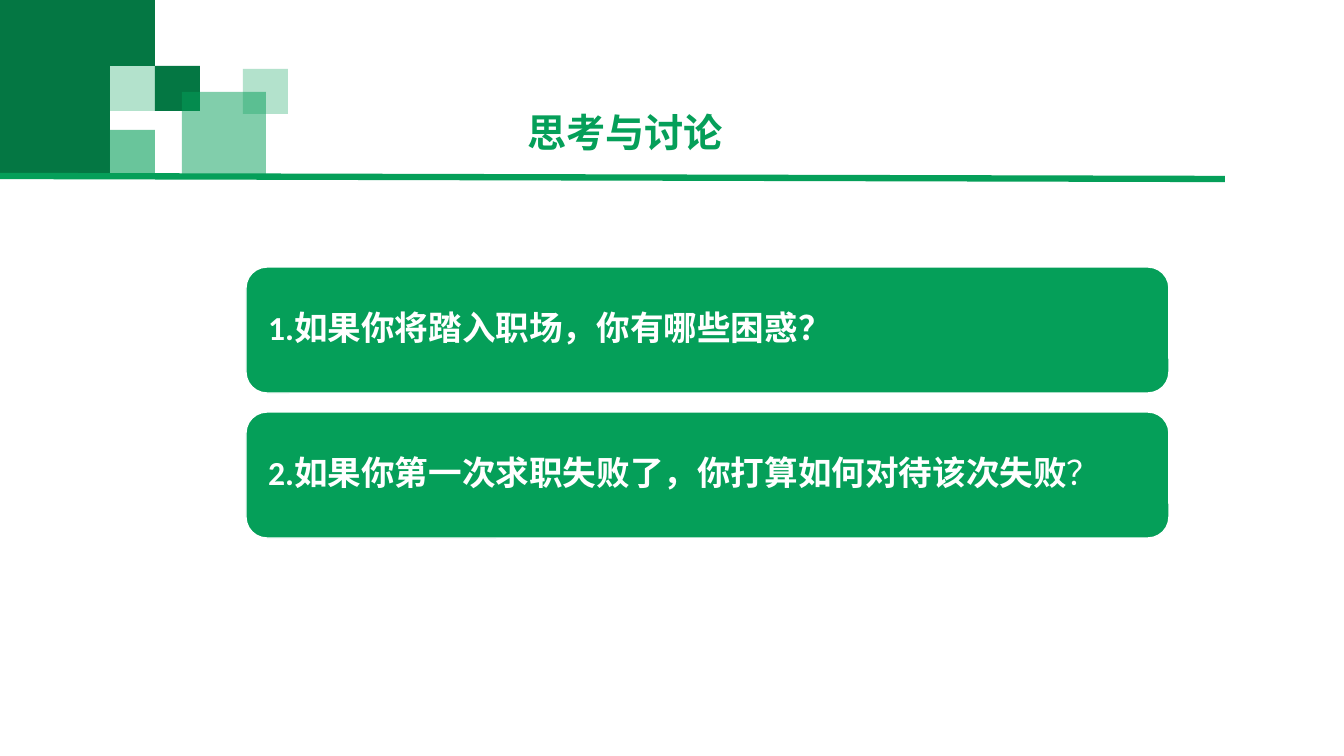
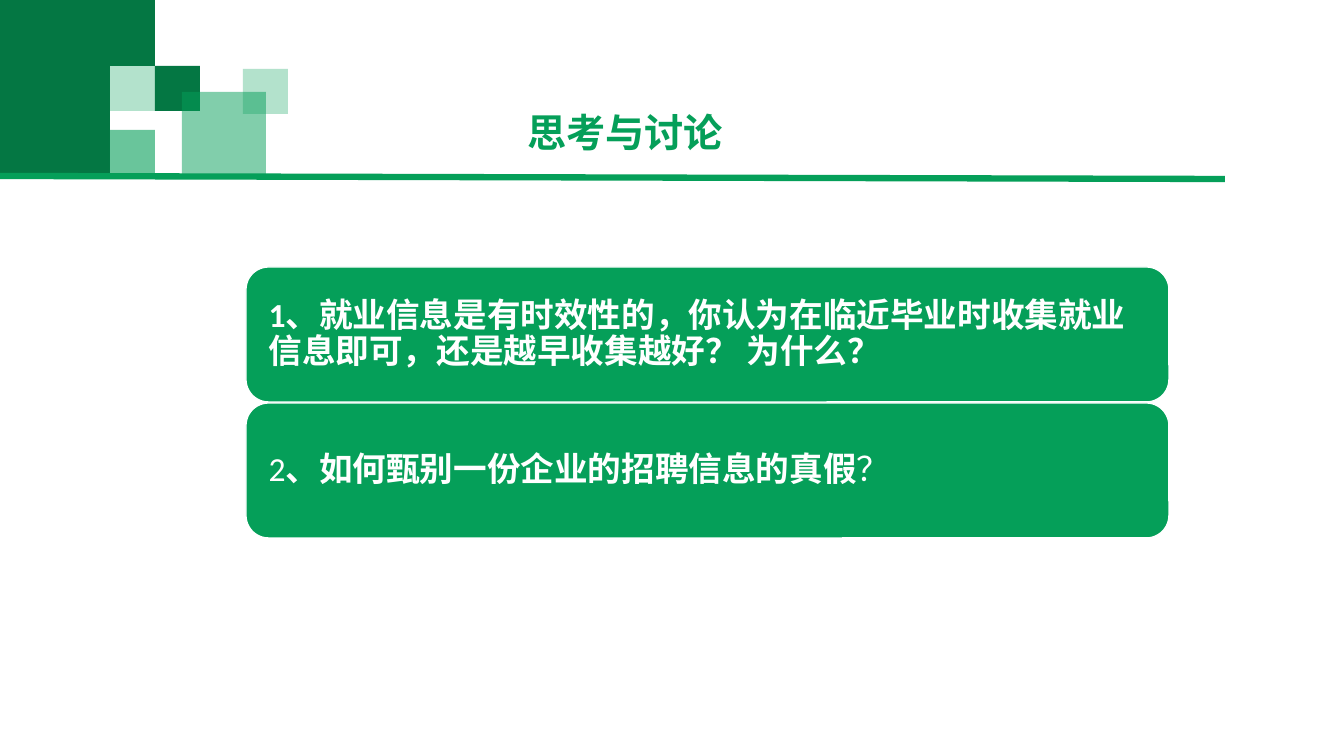
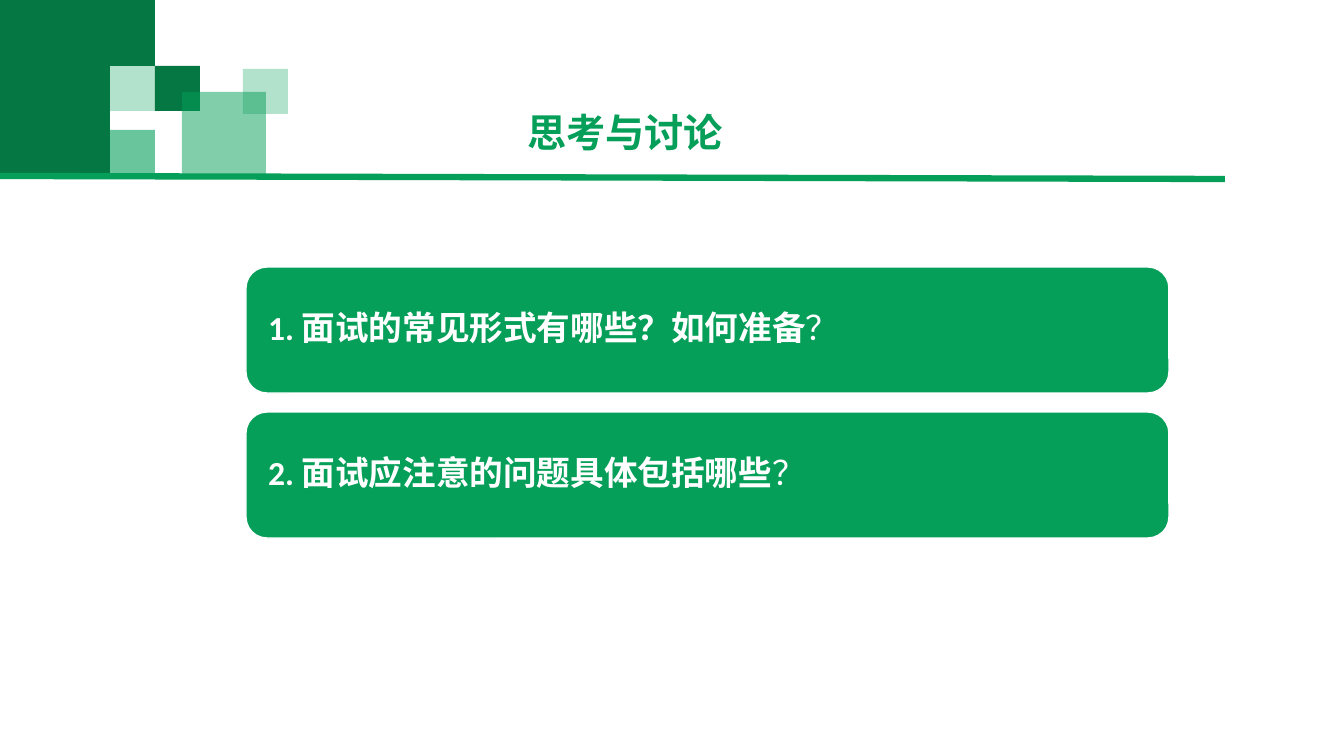
from lxml.etree import SubElement
from pptx import Presentation
from pptx.dml.color import RGBColor
from pptx.enum.lang import MSO_LANGUAGE_ID
from pptx.enum.shapes import MSO_CONNECTOR, MSO_SHAPE
from pptx.enum.text import MSO_ANCHOR, MSO_AUTO_SIZE, PP_ALIGN
from pptx.oxml.ns import qn
from pptx.util import Pt

TITLE = "思考与讨论"
SLIDES = [
    {"card_height": 126, "questions": [
        [("1.如果你将踏入职场，你有哪些困惑？", True)],
        [("2.如果你第一次求职失败了，你打算如何对待该次失败", True), ("？", False)],
    ]},
    {"card_height": 135, "questions": [
        [("1、就业信息是有时效性的，你认为在临近毕业时收集就业信息即可，还是越早收集越好？ 为什么？", True)],
        [("2", False), ("、如何甄别一份企业的招聘信息的真假", True), ("？", False)],
    ]},
    {"card_height": 126, "questions": [
        [("1. 面试的常见形式有哪些？如何准备", True), ("？", False)],
        [("2. 面试应注意的问题具体包括哪些", True), ("？", False)],
    ]},
]

FONT = "Calibri"
GREEN, DARK_GREEN, WHITE = "059F59", "047743", "FFFFFF"
SQUARES = [
    ((0, 66, 110, 110), DARK_GREEN, 100),
    ((0, 0, 155, 66), DARK_GREEN, 100),
    ((110, 66, 45, 45), GREEN, 30),
    ((155, 66, 45, 45), DARK_GREEN, 100),
    ((110, 130, 45, 45), GREEN, 60),
    ((182, 92, 84, 84), GREEN, 50),
    ((243, 69, 45, 45), GREEN, 30),
]
RULE = (0, 176, 1225, 179)
TITLE_BOX = (517, 109, 436, 52)
CARDS_BOX = (246, 267, 923, 271)
CARD_INSET = 16


def px(length):
    return round(length * 914400 / 100.8)


def color(value):
    return RGBColor.from_string(value)


def place(shape, box):
    shape.left, shape.top, shape.width, shape.height = map(px, box)


def format_run(run, size, value, bold):
    run.font.name = FONT
    run.font.size = Pt(size)
    run.font.bold = bold
    run.font.color.rgb = color(value)
    run.font.language_id = MSO_LANGUAGE_ID.SIMPLIFIED_CHINESE


def add_block(slide, kind, box, fill, opacity=100):
    shape = slide.shapes.add_shape(kind, *map(px, box))
    shape.shadow.inherit = False
    shape.fill.solid()
    shape.fill.fore_color.rgb = color(fill)
    shape.line.fill.background()
    if opacity < 100:
        fill_color = shape.element.spPr.find(qn("a:solidFill"))[0]
        SubElement(fill_color, qn("a:alpha")).set("val", str(opacity * 1000))
    return shape


def add_rule(slide):
    rule = slide.shapes.add_connector(MSO_CONNECTOR.STRAIGHT, *map(px, RULE))
    rule.line.color.rgb = color(GREEN)
    rule.line.width = Pt(4.5)
    SubElement(rule.element.spPr, qn("a:effectLst"))
    return rule


def style_layout(layout, slide):
    place(layout.placeholders[0], TITLE_BOX)
    decorations = [add_block(slide, MSO_SHAPE.RECTANGLE, *square) for square in SQUARES]
    decorations.append(add_rule(slide))
    for index, shape in enumerate(decorations):
        shape.element.xpath(".//p:cNvPr")[0].set("id", str(100 + index))
        layout.shapes.element.insert(2 + index, shape.element)


def add_title(slide):
    text_frame = slide.shapes.title.text_frame
    text_frame.text = TITLE
    text_frame.auto_size = MSO_AUTO_SIZE.NONE
    text_frame.vertical_anchor = MSO_ANCHOR.TOP
    paragraph = text_frame.paragraphs[0]
    paragraph.alignment = PP_ALIGN.LEFT
    paragraph.line_spacing = 0.9
    paragraph.space_before = Pt(10)
    format_run(paragraph.runs[0], 28, GREEN, True)


def add_card(slide, box, question):
    card = add_block(slide, MSO_SHAPE.ROUNDED_RECTANGLE, box, GREEN)
    card.line.color.rgb = color(WHITE)
    card.line.width = Pt(1)
    text_frame = card.text_frame
    text_frame.word_wrap = True
    text_frame.vertical_anchor = MSO_ANCHOR.MIDDLE
    text_frame.margin_left = text_frame.margin_right = px(CARD_INSET)
    text_frame.margin_top = text_frame.margin_bottom = px(CARD_INSET)
    paragraph = text_frame.paragraphs[0]
    paragraph.alignment = PP_ALIGN.LEFT
    paragraph.line_spacing = 0.9
    paragraph.space_after = Pt(8)
    for text, bold in question:
        run = paragraph.add_run()
        run.text = text
        format_run(run, 24, WHITE, bold)


def add_cards(slide, card_height, questions):
    left, top, width, height = CARDS_BOX
    pitch = (height - card_height) / (len(questions) - 1)
    for index, question in enumerate(questions):
        add_card(slide, (left, top + index * pitch, width, card_height), question)


def main():
    presentation = Presentation()
    presentation.slide_width, presentation.slide_height = px(1344), px(756)
    layout = presentation.slide_layouts.get_by_name("Title Only")
    for number, content in enumerate(SLIDES):
        slide = presentation.slides.add_slide(layout)
        if number == 0:
            style_layout(layout, slide)
        add_title(slide)
        add_cards(slide, **content)
    presentation.save("out.pptx")


if __name__ == "__main__":
    main()
